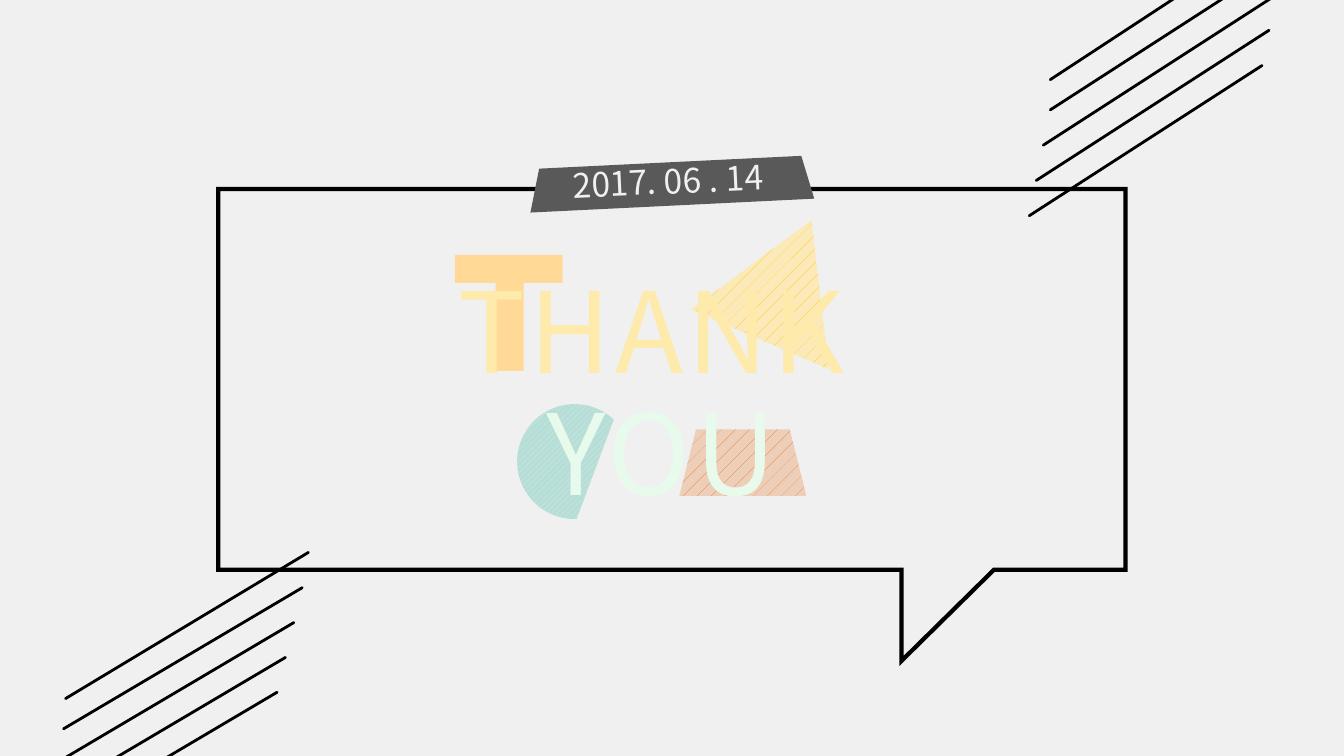
from dataclasses import dataclass

from lxml.etree import SubElement
from pptx import Presentation
from pptx.dml.color import RGBColor
from pptx.enum.dml import MSO_PATTERN
from pptx.enum.shapes import MSO_CONNECTOR, MSO_SHAPE
from pptx.enum.text import MSO_ANCHOR, MSO_AUTO_SIZE, PP_ALIGN
from pptx.oxml.ns import qn
from pptx.util import Pt

FONT = "Noto Sans CJK KR"
PAPER = RGBColor(0xF0, 0xF0, 0xF0)
BLACK = RGBColor(0x00, 0x00, 0x00)
TAPE_GREY = RGBColor(0x59, 0x59, 0x59)
ORANGE = RGBColor(0xFF, 0xD9, 0x95)
YELLOW = RGBColor(0xFE, 0xEA, 0xAA)
MINT = RGBColor(0xE7, 0xFA, 0xEB)

Point = tuple[float, float]
Box = tuple[float, float, float, float]


@dataclass
class Ornament:
    kind: MSO_SHAPE
    box: Box
    rotation: float
    pattern: MSO_PATTERN
    fore: RGBColor
    back: RGBColor


@dataclass
class Stripes:
    """One longer first line, then four equal lines at a constant step."""
    first: Point
    first_run: Point
    second: Point
    run: Point
    step: Point


@dataclass
class Label:
    text: str
    box: Box
    size: float
    color: RGBColor
    spacing: float = 0
    rotation: float = 0
    align: PP_ALIGN = PP_ALIGN.LEFT


ORNAMENTS = [
    Ornament(MSO_SHAPE.TRAPEZOID, (485.3, 306.7, 90.7, 47.5), 0, MSO_PATTERN.PERCENT_5,
             RGBColor(0xED, 0x7D, 0x31), RGBColor(0xED, 0xCE, 0xB8)),
    Ornament(MSO_SHAPE.CHORD, (369.4, 288.7, 82.1, 82.1), 43, MSO_PATTERN.WIDE_UPWARD_DIAGONAL,
             RGBColor(0xD7, 0xED, 0xE9), RGBColor(0xB6, 0xDE, 0xD7)),
    Ornament(MSO_SHAPE.ISOSCELES_TRIANGLE, (507.6, 153.4, 107.3, 92.9), 23.4, MSO_PATTERN.PERCENT_5,
             RGBColor(0xFF, 0xC3, 0x01), RGBColor(0xFB, 0xEA, 0xB8)),
]
STRIPES = [
    Stripes((46.8, 499), (173.5, -104.4), (45.4, 520.6), (170.5, -100.8), (-6, 24.9)),
    Stripes((750.2, 56.9), (169.2, -110.9), (750.2, 78.5), (166.3, -107.3), (-5, 25.2)),
]
LETTER_T = [(325.4, 182.2), (401.8, 182.2), (401.8, 202.3), (373.7, 202.3),
            (373.7, 265), (353.5, 265), (353.5, 202.3), (325.4, 202.3)]
BUBBLE = [(156.2, 135.4), (804.2, 135.4), (804.2, 406.8), (709.9, 406.8),
          (644.4, 472.3), (644.4, 406.8), (156.2, 406.8)]
THANK = Label("THANK", (320.4, 182.9, 316.1, 104.4), 80, YELLOW, spacing=3)
YOU = Label("YOU", (383, 270.7, 195.8, 104.4), 80, MINT, spacing=3)
DATE = Label("2017. 06 . 14", (398.2, 110.9, 157.7, 36), 24, PAPER,
             rotation=-2.7, align=PP_ALIGN.CENTER)
TAPE: Box = (378, 115.9, 203, 31)


def add_preset(shapes, kind: MSO_SHAPE, box: Box, rotation: float):
    sp = shapes.add_shape(kind, *map(Pt, box))
    sp.rotation = rotation
    sp.shadow.inherit = False
    sp.line.fill.background()
    return sp


def add_ornament(shapes, ornament: Ornament) -> None:
    sp = add_preset(shapes, ornament.kind, ornament.box, ornament.rotation)
    sp.fill.patterned()
    sp.fill.pattern = ornament.pattern
    sp.fill.fore_color.rgb = ornament.fore
    sp.fill.back_color.rgb = ornament.back


def add_outline(shapes, points: list[Point]):
    builder = shapes.build_freeform(*points[0], scale=Pt(1))
    builder.add_line_segments(points[1:], close=True)
    sp = builder.convert_to_shape()
    sp.shadow.inherit = False
    return sp


def add_stripe(shapes, start: Point, run: Point) -> None:
    x, y = start
    dx, dy = run
    line = shapes.add_connector(MSO_CONNECTOR.STRAIGHT, Pt(x), Pt(y), Pt(x + dx), Pt(y + dy))
    line.line.color.rgb = BLACK
    line.line.width = Pt(2)
    sp_pr = line._element.spPr
    sp_pr.find(qn("a:ln")).set("cap", "rnd")
    SubElement(sp_pr, qn("a:effectLst"))


def add_stripes(shapes, stripes: Stripes) -> None:
    group = shapes.add_group_shape().shapes
    add_stripe(group, stripes.first, stripes.first_run)
    (x, y), (dx, dy) = stripes.second, stripes.step
    for i in range(4):
        add_stripe(group, (x + i * dx, y + i * dy), stripes.run)


def write_label(sp, label: Label) -> None:
    sp.left, sp.top, sp.width, sp.height = map(Pt, label.box)
    sp.rotation = label.rotation
    tf = sp.text_frame
    tf.text = label.text
    tf.word_wrap = False
    tf.auto_size = MSO_AUTO_SIZE.SHAPE_TO_FIT_TEXT
    tf.vertical_anchor = MSO_ANCHOR.TOP
    p = tf.paragraphs[0]
    p.alignment = label.align
    p.font.name = FONT
    p.font.size = Pt(label.size)
    p.font.color.rgb = label.color
    if label.spacing:
        p._p.pPr.find(qn("a:defRPr")).set("spc", str(round(label.spacing * 100)))


def add_label(shapes, label: Label) -> None:
    write_label(shapes.add_textbox(*map(Pt, label.box)), label)


def main() -> None:
    prs = Presentation()
    prs.slide_width, prs.slide_height = Pt(960), Pt(540)
    s = prs.slides.add_slide(prs.slide_layouts[5])
    s.background.fill.solid()
    s.background.fill.fore_color.rgb = PAPER
    shapes = s.shapes

    letter = add_outline(shapes, LETTER_T)
    letter.fill.solid()
    letter.fill.fore_color.rgb = ORANGE
    letter.line.fill.background()
    for ornament in ORNAMENTS:
        add_ornament(shapes, ornament)

    title = shapes.title
    write_label(title, THANK)
    shapes._spTree.append(title._element)  # bring the title in front of the ornaments
    add_label(shapes, YOU)

    for stripes in STRIPES:
        add_stripes(shapes, stripes)

    bubble = add_outline(shapes, BUBBLE)
    bubble.fill.background()
    bubble.line.color.rgb = BLACK
    bubble.line.width = Pt(3)
    SubElement(bubble._element.spPr.find(qn("a:ln")), qn("a:miter"), lim="800000")

    banner = shapes.add_group_shape().shapes
    tape = add_preset(banner, MSO_SHAPE.TRAPEZOID, TAPE, -2.8)
    tape.fill.solid()
    tape.fill.fore_color.rgb = TAPE_GREY
    add_label(banner, DATE)

    prs.save("out.pptx")


if __name__ == "__main__":
    main()
